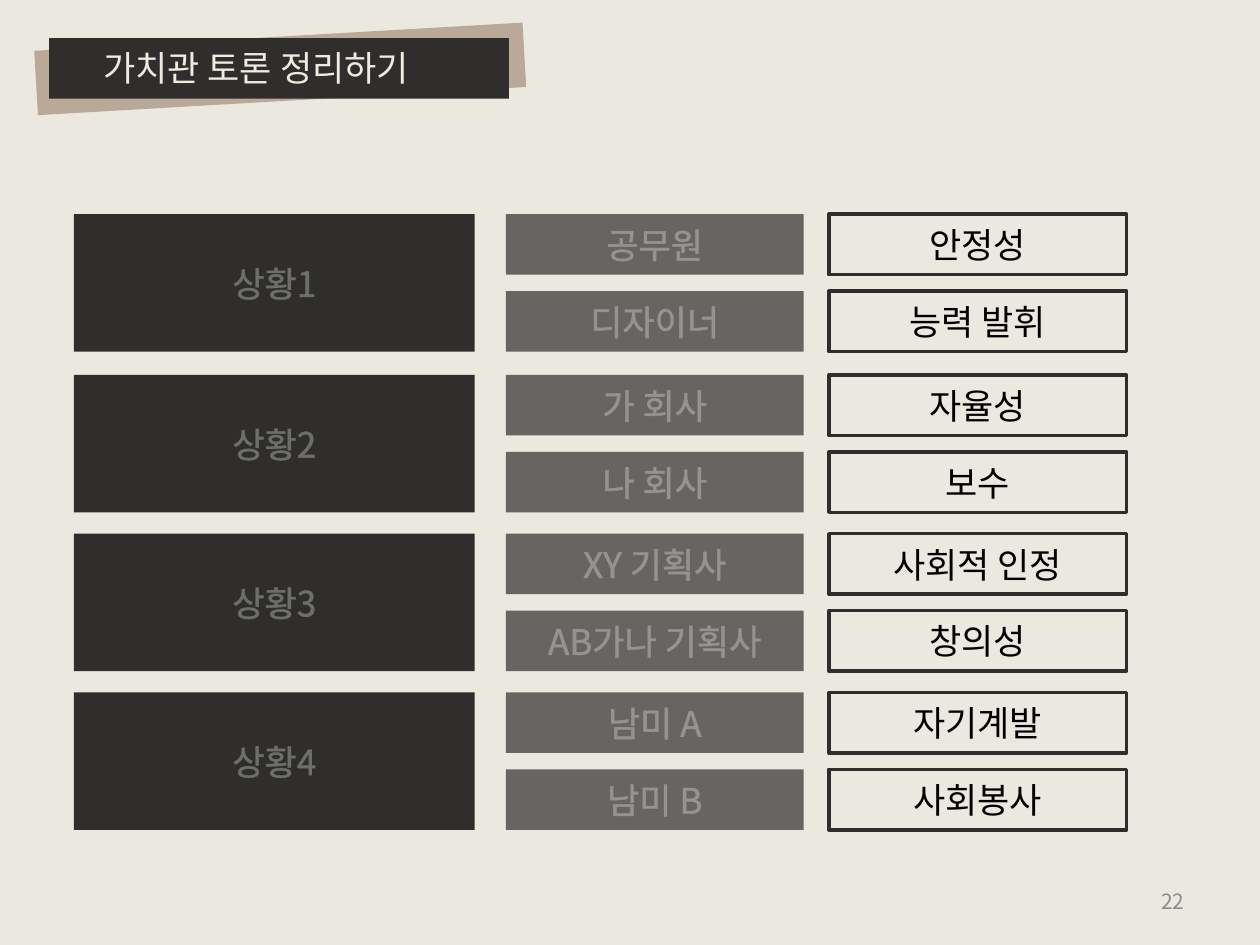
from lxml import etree
from pptx import Presentation
from pptx import util as u
from pptx.dml.color import RGBColor
from pptx.enum import shapes, text
from pptx.oxml.ns import qn

PAPER = RGBColor(0xEB, 0xE8, 0xE0)
TAN = RGBColor(0xBA, 0xA9, 0x99)
DARK = RGBColor(0x2F, 0x2E, 0x2C)
GRAY = RGBColor(0x67, 0x65, 0x62)
CREAM = RGBColor(0xEE, 0xEC, 0xE1)
WHITE = RGBColor(0xFF, 0xFF, 0xFF)
BLACK = RGBColor(0, 0, 0)
PALE = RGBColor(0x8C, 0x8C, 0x8C)
FONT = "Noto Sans CJK KR"

deck = Presentation()
deck.slide_width, deck.slide_height = u.Cm(25.4), u.Cm(19.05)
slide = deck.slides.add_slide(deck.slide_layouts[6])
slide.background.fill.solid()
slide.background.fill.fore_color.rgb = PAPER


def write(shape, words, size, color, align, edge=None):
    """Set one line of text, with a faint outline in the edge colour."""
    frame = shape.text_frame
    frame.word_wrap = True
    para = frame.paragraphs[0]
    para.text = words
    para.alignment = align
    font = para.runs[0].font
    font.size, font.name = u.Pt(size), FONT
    font.color.rgb = color
    props = para.runs[0]._r.get_or_add_rPr()
    etree.SubElement(props, qn("a:ea"), typeface=FONT)
    if edge is not None:
        line = etree.Element(qn("a:ln"), w=str(u.Pt(0.75)))
        fill = etree.SubElement(line, qn("a:solidFill"))
        tone = etree.SubElement(fill, qn("a:srgbClr"), val=str(edge))
        etree.SubElement(tone, qn("a:alpha"), val="30000")
        props.insert(0, line)


def box(left, top, width, height, fill=None, words=None, color=WHITE):
    """Add a filled box, or a dark frame when there is no fill."""
    rect = slide.shapes.add_shape(
        shapes.MSO_SHAPE.RECTANGLE,
        u.Cm(left), u.Cm(top), u.Cm(width), u.Cm(height))
    rect.shadow.inherit = False
    if fill is None:
        rect.fill.background()
        rect.line.color.rgb = DARK
        rect.line.width = u.Pt(2)
    else:
        rect.fill.solid()
        rect.fill.fore_color.rgb = fill
        rect.line.fill.background()
    if words:
        rect.text_frame.vertical_anchor = text.MSO_ANCHOR.MIDDLE
        write(rect, words, 20, color, text.PP_ALIGN.CENTER, WHITE)
    return rect


# Title banner
box(0.72, 0.74, 9.86, 1.3, TAN).rotation = 356.7
box(0.99, 0.77, 9.27, 1.22, DARK)
title = slide.shapes.add_textbox(u.Cm(1.83), u.Cm(0.81), u.Cm(7.8), u.Cm(1.11))
write(title, "가치관 토론 정리하기", 20, CREAM, text.PP_ALIGN.LEFT, CREAM)

# Page number
page = slide.shapes.add_textbox(u.Cm(18.21), u.Cm(17.65), u.Cm(5.92), u.Cm(1.02))
page.text_frame.vertical_anchor = text.MSO_ANCHOR.MIDDLE
write(page, "22", 12, PALE, text.PP_ALIGN.RIGHT)

# Cases: top, then each choice with its value
cases = [
    (4.32, [("공무원", "안정성"), ("디자이너", "능력 발휘")]),
    (7.56, [("가 회사", "자율성"), ("나 회사", "보수")]),
    (10.76, [("XY 기획사", "사회적 인정"), ("AB가나 기획사", "창의성")]),
    (13.96, [("남미 A", "자기계발"), ("남미 B", "사회봉사")]),
]
STEP = 1.55
for num, (top, pairs) in enumerate(cases, 1):
    box(1.49, top, 8.08, 2.77, DARK, f"상황{num}")
    for row, (choice, value) in enumerate(pairs):
        y = top + row * STEP
        box(10.2, y, 6, 1.22, GRAY, choice)
        box(16.71, y, 6, 1.22, None, value, BLACK)

deck.save("out.pptx")
